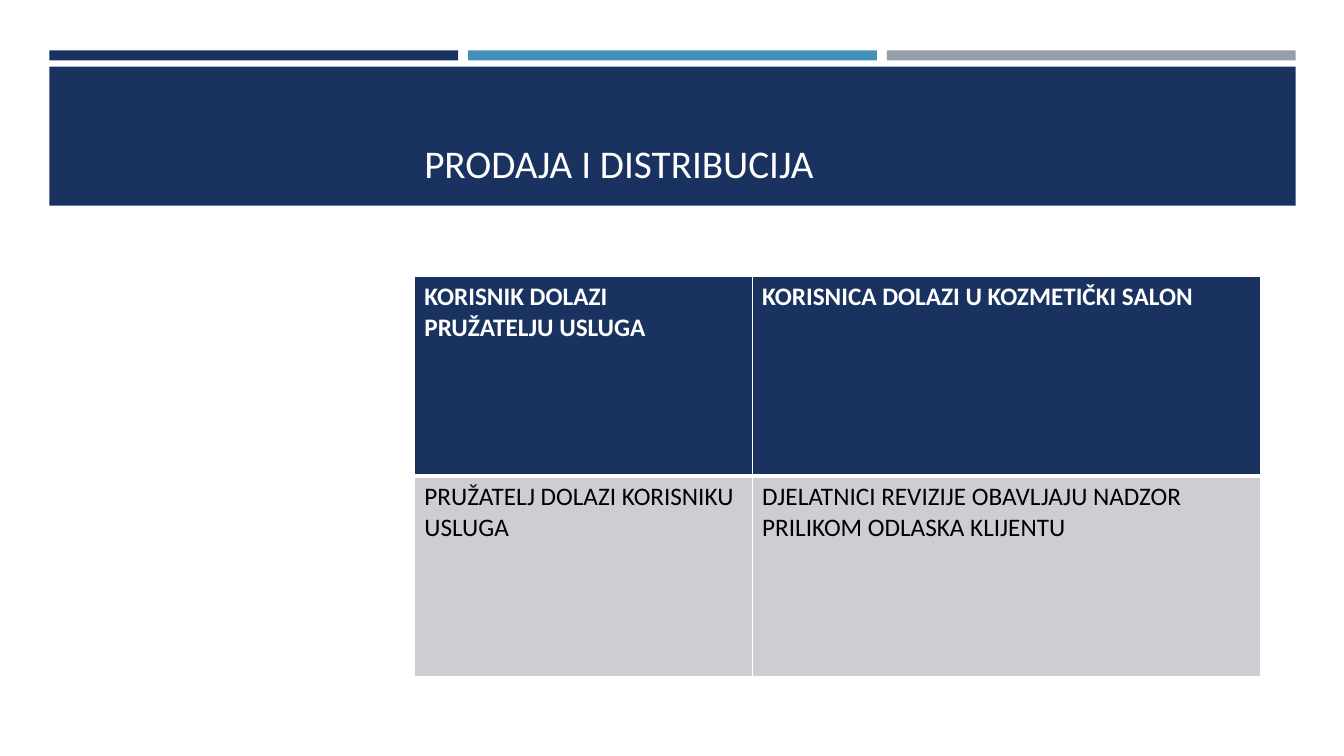
import pptx
import pptx.dml.color
import pptx.enum.shapes
import pptx.enum.text
import pptx.oxml
import pptx.oxml.ns
import pptx.util

Inches = pptx.util.Inches

NAVY, BLUE, GREY, PALE = "1A3260", "4590B8", "969FA7", "CDCED2"
WHITE, BLACK = "FFFFFF", "000000"
FONT = "Calibri"

TITLE = "PRODAJA I DISTRIBUCIJA"
ROWS = [
    ("KORISNIK DOLAZI PRUŽATELJU USLUGA",
     "KORISNICA DOLAZI U KOZMETIČKI SALON"),
    ("PRUŽATELJ DOLAZI KORISNIKU USLUGA",
     "DJELATNICI REVIZIJE OBAVLJAJU NADZOR PRILIKOM ODLASKA KLIJENTU"),
]
STRIPES = [NAVY, BLUE, GREY]

WIDTH, HEIGHT = 13.33, 7.5
MARGIN = 0.49
BAND_WIDTH = 12.36
STRIPE_GAP = 0.1
STRIPE_WIDTH = (BAND_WIDTH - STRIPE_GAP * (len(STRIPES) - 1)) / len(STRIPES)
CONTENT_LEFT = 4.11
COLUMN_WIDTHS = [3.35, 5.04]
ROW_HEIGHT = 1.985


def color(value):
    return pptx.dml.color.RGBColor.from_string(value)


def write(frame, text, size, ink, bold=False):
    para = frame.paragraphs[0]
    para.alignment = pptx.enum.text.PP_ALIGN.LEFT
    span = para.add_run()
    span.text = text
    span.font.name = FONT
    span.font.size = pptx.util.Pt(size)
    span.font.bold = bold
    span.font.color.rgb = color(ink)


def add_bar(slide, left, top, width, height, fill):
    bar = slide.shapes.add_shape(
        pptx.enum.shapes.MSO_SHAPE.RECTANGLE,
        Inches(left), Inches(top), Inches(width), Inches(height))
    bar.shadow.inherit = False
    bar.fill.solid()
    bar.fill.fore_color.rgb = color(fill)
    bar.line.fill.background()


def set_borders(cell, **widths):
    """Give the cell white borders, in points, keyed by side: L, R, T, B."""
    properties = cell._tc.get_or_add_tcPr()
    for index, (side, width) in enumerate(widths.items()):
        properties.insert(index, pptx.oxml.parse_xml(
            f'<a:ln{side} {pptx.oxml.ns.nsdecls("a")} w="{pptx.util.Pt(width)}">'
            f'<a:solidFill><a:srgbClr val="{WHITE}"/></a:solidFill></a:ln{side}>'))


def add_header(slide):
    for index, fill in enumerate(STRIPES):
        left = MARGIN + index * (STRIPE_WIDTH + STRIPE_GAP)
        add_bar(slide, left, 0.5, STRIPE_WIDTH, 0.1, fill)
    add_bar(slide, MARGIN, 0.66, BAND_WIDTH, 1.38, NAVY)
    box = slide.shapes.add_textbox(
        Inches(CONTENT_LEFT), Inches(0.8), Inches(8.59), Inches(1.08))
    frame = box.text_frame
    frame.word_wrap = True
    frame.vertical_anchor = pptx.enum.text.MSO_ANCHOR.BOTTOM
    frame.margin_bottom = Inches(0.03)
    write(frame, TITLE, 28, WHITE)


def add_distribution_table(slide):
    table = slide.shapes.add_table(
        len(ROWS), len(COLUMN_WIDTHS), Inches(CONTENT_LEFT), Inches(2.74),
        Inches(sum(COLUMN_WIDTHS)), Inches(ROW_HEIGHT * len(ROWS))).table
    table.horz_banding = False
    for column, width in zip(table.columns, COLUMN_WIDTHS):
        column.width = Inches(width)
    for row_index, texts in enumerate(ROWS):
        heading = row_index == 0
        table.rows[row_index].height = Inches(ROW_HEIGHT)
        for column_index, text in enumerate(texts):
            cell = table.cell(row_index, column_index)
            cell.fill.solid()
            cell.fill.fore_color.rgb = color(NAVY if heading else PALE)
            set_borders(cell, L=1, R=1, T=1 if heading else 3, B=3 if heading else 1)
            write(cell.text_frame, text, 18, WHITE if heading else BLACK, bold=heading)


def main():
    deck = pptx.Presentation()
    deck.slide_width, deck.slide_height = Inches(WIDTH), Inches(HEIGHT)
    page = deck.slides.add_slide(deck.slide_layouts[6])
    add_header(page)
    add_distribution_table(page)
    deck.save("out.pptx")


if __name__ == "__main__":
    main()
